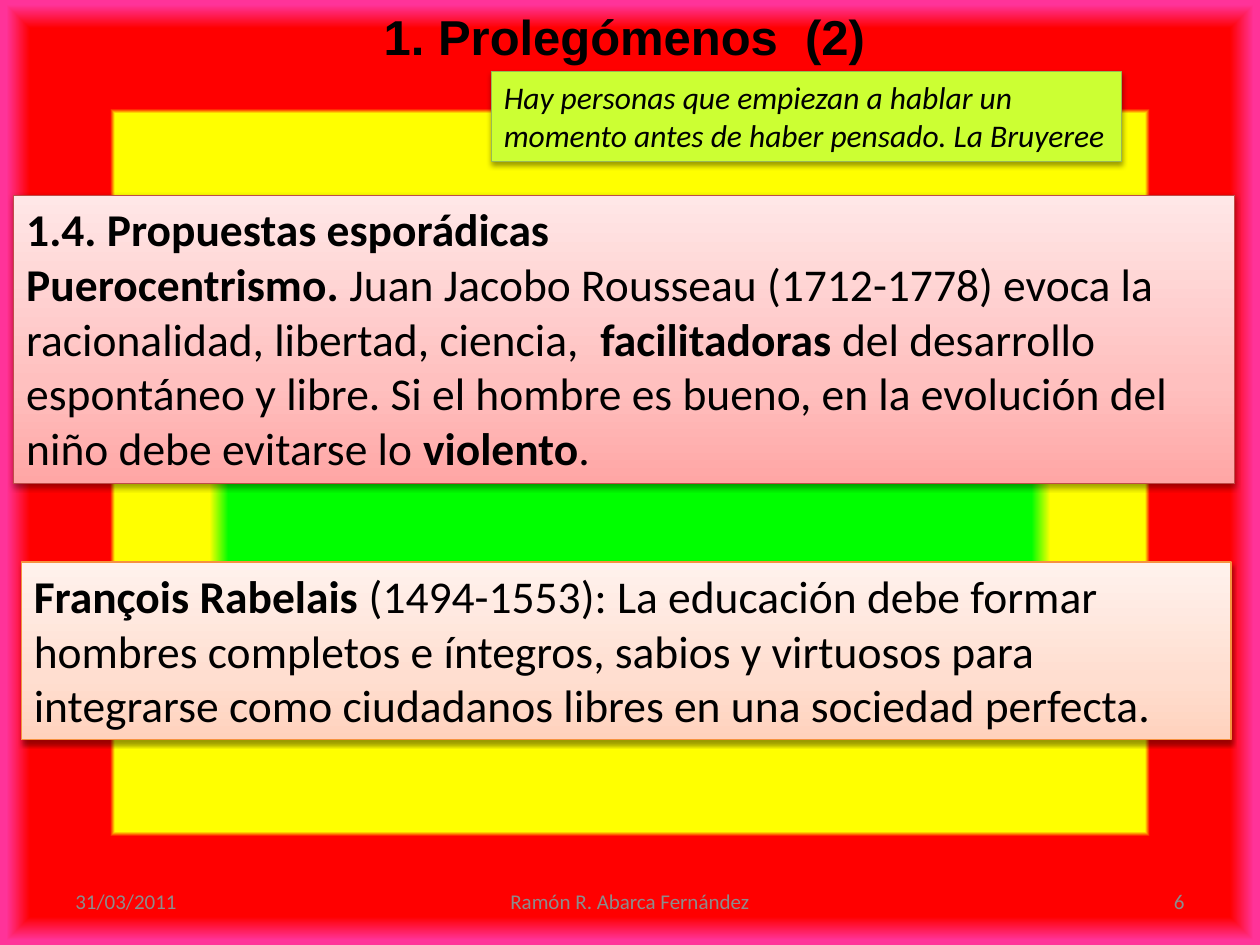
import dataclasses

import lxml.etree
import pptx
import pptx.dml.color
import pptx.enum.shapes
import pptx.enum.text
import pptx.oxml.ns
import pptx.util

Inches = pptx.util.Inches
Align = pptx.enum.text.PP_ALIGN
Anchor = pptx.enum.text.MSO_ANCHOR


@dataclasses.dataclass(frozen=True)
class Theme:
    title_font: str = "Arial"
    body_font: str = "Calibri"
    title_size: int = 28
    body_size: int = 26
    quote_size: int = 18
    footer_size: int = 12
    text: str = "000000"
    muted: str = "8C8C8C"
    quote_fill: str = "CCFF33"
    quote_line: str = "98B955"
    red_line: str = "BF4C48"
    orange_line: str = "F69240"
    red_stops: tuple = ((0, "FFA6A5"), (35, "FFC0BF"), (100, "FFE7E7"))
    orange_stops: tuple = ((0, "FFD2BD"), (35, "FFDED0"), (100, "FFF2ED"))
    background_stops: tuple = (
        (3, "00FF00"), (52, "00FF00"), (56, "FFFF00"), (76, "FFFF00"),
        (77, "FF0000"), (94, "FF0000"), (99, "FF3399"))


THEME = Theme()


def rgb(value):
    return pptx.dml.color.RGBColor.from_string(value)


def add_element(parent, tag, **attributes):
    element = lxml.etree.SubElement(parent, pptx.oxml.ns.qn(tag))
    for name, value in attributes.items():
        element.set(name, str(value))
    return element


def write_stops(gradient, stops):
    stop_list = gradient.find(pptx.oxml.ns.qn("a:gsLst"))
    for old_stop in list(stop_list):
        stop_list.remove(old_stop)
    for percent, color in stops:
        stop = add_element(stop_list, "a:gs", pos=percent * 1000)
        add_element(stop, "a:srgbClr", val=color)


def paint_background(slide):
    """Gradient that grows from the slide's centre to its edges."""
    slide.background.fill.gradient()
    gradient = slide.element.xpath(".//p:bg//a:gradFill")[0]
    write_stops(gradient, THEME.background_stops)
    gradient.remove(gradient.find(pptx.oxml.ns.qn("a:lin")))
    outline = add_element(gradient, "a:path", path="shape")
    add_element(outline, "a:fillToRect", l=50000, t=50000, r=50000, b=50000)


def write_text(shape, paragraphs, size, font=THEME.body_font, color=THEME.text,
               align=Align.LEFT, anchor=Anchor.TOP, italic=False):
    """Fill a shape with paragraphs, each a list of (text, bold) runs."""
    frame = shape.text_frame
    frame.word_wrap = True
    frame.vertical_anchor = anchor
    frame.auto_size = pptx.enum.text.MSO_AUTO_SIZE.NONE
    for index, runs in enumerate(paragraphs):
        paragraph = frame.add_paragraph() if index else frame.paragraphs[0]
        paragraph.alignment = align
        for text, bold in runs:
            run = paragraph.add_run()
            run.text = text
            formats = {"name": font, "size": pptx.util.Pt(size),
                       "bold": bold, "italic": italic}
            for name, value in formats.items():
                setattr(run.font, name, value)
            run.font.color.rgb = rgb(color)


def place_title(slide, box, text):
    title = slide.shapes.title
    for name, value in zip(("left", "top", "width", "height"), box):
        setattr(title, name, Inches(value))
    write_text(title, [[(text, True)]], THEME.title_size,
               font=THEME.title_font, align=Align.CENTER)


def add_panel(slide, box, line, paragraphs, fill=None, stops=None,
              size=THEME.body_size, italic=False):
    """Shadowed rectangle with a plain fill or upward gradient stops."""
    panel = slide.shapes.add_shape(
        pptx.enum.shapes.MSO_SHAPE.RECTANGLE, *map(Inches, box))
    if stops:
        panel.fill.gradient()
        panel.fill.gradient_angle = 90
        write_stops(panel.element.xpath(".//a:gradFill")[0], stops)
    else:
        panel.fill.solid()
        panel.fill.fore_color.rgb = rgb(fill)
    panel.line.color.rgb = rgb(line)
    panel.line.width = pptx.util.Pt(0.75)
    panel.shadow.inherit = False
    effects = panel.element.xpath("./p:spPr/a:effectLst")[0]
    shadow = add_element(effects, "a:outerShdw", blurRad=pptx.util.Pt(3.1),
                         dist=pptx.util.Pt(1.6), dir=90 * 60000, rotWithShape=0)
    color = add_element(shadow, "a:srgbClr", val="000000")
    add_element(color, "a:alpha", val=38000)
    write_text(panel, paragraphs, size, italic=italic)


def add_footer(slide, box, date, author, number):
    left, top, width, height = box
    side, middle = 2.33, 3.17
    columns = (
        (date, left, side, Align.LEFT),
        (author, left + (width - middle) / 2, middle, Align.CENTER),
        (number, left + width - side, side, Align.RIGHT),
    )
    for text, column_left, column_width, align in columns:
        shape = slide.shapes.add_textbox(
            *map(Inches, (column_left, top, column_width, height)))
        write_text(shape, [[(text, False)]], THEME.footer_size,
                   color=THEME.muted, align=align, anchor=Anchor.MIDDLE)


def main():
    presentation = pptx.Presentation()
    presentation.slide_width = Inches(10)
    presentation.slide_height = Inches(7.5)
    title_only = presentation.slide_layouts[5]
    slide = presentation.slides.add_slide(title_only)

    paint_background(slide)
    add_footer(slide, (0.5, 6.95, 9, 0.4),
               "31/03/2011", "Ramón R. Abarca Fernández", "6")
    add_panel(slide, (0.11, 1.55, 9.69, 2.29), THEME.red_line, [
        [("1.4. Propuestas esporádicas", True)],
        [("Puerocentrismo. ", True),
         ("Juan Jacobo Rousseau (1712-1778) evoca la racionalidad, "
          "libertad, ciencia,  ", False),
         ("facilitadoras ", True),
         ("del desarrollo espontáneo y libre. Si el hombre es bueno, en la "
          "evolución del niño debe evitarse lo ", False),
         ("violento", True),
         (".", False)],
    ], stops=THEME.red_stops)
    place_title(slide, (0.14, 0, 9.63, 0.57), "1. Prolegómenos  (2)")
    add_panel(slide, (3.9, 0.57, 5, 0.71), THEME.quote_line, [
        [("Hay personas que empiezan a hablar un momento antes de haber "
          "pensado. La Bruyeree", False)],
    ], fill=THEME.quote_fill, size=THEME.quote_size, italic=True)
    add_panel(slide, (0.17, 4.46, 9.6, 1.41), THEME.orange_line, [
        [("François Rabelais", True),
         (" (1494-1553): La educación debe formar hombres completos e "
          "íntegros, sabios y virtuosos para integrarse como ciudadanos "
          "libres en una sociedad perfecta.", False)],
    ], stops=THEME.orange_stops)

    presentation.save("out.pptx")


if __name__ == "__main__":
    main()
